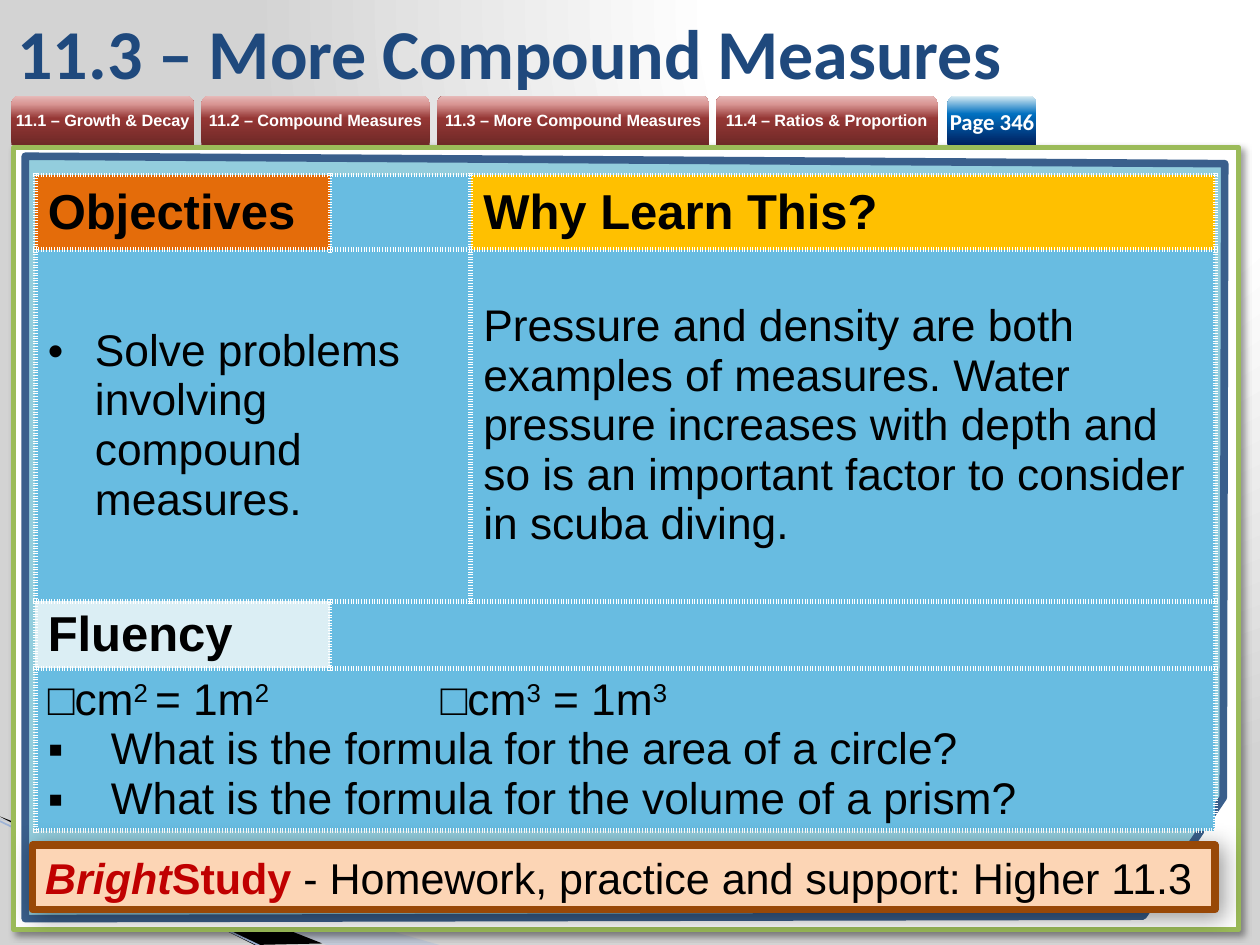
"""Build the lesson 11.3 opening slide on more compound measures."""
from lxml import etree
from pptx import Presentation
from pptx import util as u
from pptx.dml.color import RGBColor
from pptx.enum import dml, shapes, text
from pptx.oxml import ns

Cm, Pt = u.Cm, u.Pt
COLORS = {
    "white": "FFFFFF", "black": "000000", "grey": "D3D3D3", "navy": "1F497D",
    "swoosh": "A7B9DB", "stripe": "9EB3D6", "green": "9BBB59", "aqua": "93CDDD",
    "frame": "3A5F8C", "sky": "68BCE1", "orange": "E46C0A", "gold": "FFC000",
    "ice": "DBEEF4", "peach": "FCD5B5", "brown": "984807", "red": "C00000",
    "red1": "6F2927", "red2": "953735", "red3": "D99694", "red4": "E6B9B8",
    "blue1": "002060", "blue2": "0070C0",
}
RGB = {name: RGBColor.from_string(value) for name, value in COLORS.items()}


def add_xml(parent, tag, index=None, **attrs):
    """Add a DrawingML child element and return it."""
    el = etree.Element(ns.qn("a:" + tag), {k: str(v) for k, v in attrs.items()})
    parent.insert(len(parent) if index is None else index, el)
    return el


def add_gradient(root, stops):
    """Replace the first gradient's contents under root with the given stops."""
    grad = next(root.iter(ns.qn("a:gradFill")))
    for child in list(grad):
        grad.remove(child)
    gs_list = add_xml(grad, "gsLst")
    for pos, color in stops:
        gs = add_xml(gs_list, "gs", pos=pos * 1000)
        add_xml(gs, "srgbClr", val=COLORS[color])
    return grad


prs = Presentation()
prs.slide_width, prs.slide_height = Cm(25.4), Cm(19.05)
s = prs.slides.add_slide(prs.slide_layouts[5])

s.background.fill.gradient()
grad = add_gradient(s._element, [(0, "white"), (40, "white"), (100, "grey")])
add_xml(add_xml(grad, "path", path="circle"), "fillToRect", l=65000, b=98000)

outlines = [
    ("swoosh", None, [(-0.03, 16.51), (8.86, 19.05), (6.58, 19.05), (-0.03, 16.48)]),
    ("black", None, [(0, 16.46), (6.5, 19.02), (5.13, 19.05), (0.03, 16.48)]),
    ("aqua", "frame", [(0.51, 3.15), (24.69, 3.3), (24.66, 16.08), (23.04, 18.47), (0.51, 18.52)]),
]
for fill, line, points in outlines:
    if line:
        c = s.shapes.add_connector(shapes.MSO_CONNECTOR.STRAIGHT, Cm(-0.03), Cm(16.54), Cm(5.31), Cm(19.1))
        c.line.color.rgb, c.line.width = RGB["stripe"], Pt(0.95)
        add_xml(c._element.spPr, "effectLst")
        panel = s.shapes.add_shape(shapes.MSO_SHAPE.RECTANGLE, Cm(0.28), Cm(2.97), Cm(24.69), Cm(15.77))
    start, *rest = [(Cm(x), Cm(y)) for x, y in points]
    fb = s.shapes.build_freeform(*start)
    fb.add_line_segments(rest)
    sp = fb.convert_to_shape()
    sp.shadow.inherit = False
    sp.fill.solid()
    sp.fill.fore_color.rgb = RGB[fill]
    if line:
        sp.line.color.rgb, sp.line.width = RGB[line], Pt(4.33)
    else:
        sp.line.fill.background()
    if fill == "swoosh":
        add_xml(next(sp._element.spPr.iter(ns.qn("a:srgbClr"))), "alpha", val=40000)

reds = [(0, "red1"), (54, "red2"), (83, "red3"), (100, "red4")]
blues = [(0, "blue1"), (63, "blue2"), (100, "ice")]
tabs = [
    ("11.1 – Growth & Decay", 0.23, 3.68, reds, "Arial", 9.3),
    ("11.2 – Compound Measures", 4.06, 4.6, reds, "Arial", 9.3),
    ("11.3 – More Compound Measures", 8.81, 5.49, reds, "Arial", 9.3),
    ("11.4 – Ratios & Proportion", 14.43, 4.47, reds, "Arial", 9.3),
    ("Page 346", 19.1, 1.8, blues, "Calibri", 13),
]
for label, left, width, stops, font, size in tabs:
    sp = s.shapes.add_shape(shapes.MSO_SHAPE.ROUND_2_SAME_RECTANGLE, Cm(left), Cm(1.93), Cm(width), Cm(0.99))
    sp.shadow.inherit = False
    sp.line.fill.background()
    sp.fill.gradient()
    add_xml(add_gradient(sp._element, stops), "lin", ang=16200000, scaled=0)
    tf = sp.text_frame
    tf.margin_left = tf.margin_right = tf.margin_top = tf.margin_bottom = 0
    tf.vertical_anchor = text.MSO_ANCHOR.MIDDLE
    p = tf.paragraphs[0]
    p.text, p.alignment = label, text.PP_ALIGN.CENTER
    if stops is reds:
        p.line_spacing = Pt(10)
    p.font.name, p.font.size, p.font.bold = font, Pt(size), True
    p.font.color.rgb = RGB["white"]

title = s.shapes.title
title.left, title.top, title.width, title.height = Cm(0.1), Cm(0.13), Cm(21.01), Cm(1.8)
title.text_frame.vertical_anchor = text.MSO_ANCHOR.MIDDLE
p = title.text_frame.paragraphs[0]
p.text, p.alignment = "11.3 – More Compound Measures", text.PP_ALIGN.LEFT
p.font.name, p.font.size, p.font.bold = "Calibri", Pt(40), True
p.font.color.rgb = RGB["navy"]

cols, rows = [5.94, 2.84, 15.01], [1.5, 7.09, 1.35, 3.27]
tbl = s.shapes.add_table(4, 3, Cm(0.71), Cm(3.53), Cm(sum(cols)), Cm(sum(rows))).table
tbl.first_row = tbl.horz_banding = False
for col, width in zip(tbl.columns, cols):
    col.width = Cm(width)
for row, height in zip(tbl.rows, rows):
    row.height = Cm(height)
for row, first, last in [(1, 0, 1), (2, 1, 2), (3, 0, 2)]:
    tbl.cell(row, first).merge(tbl.cell(row, last))

headings = {(0, 0): "orange", (0, 2): "gold", (2, 0): "ice"}
contents = {
    (0, 0): [("Objectives", None, 0)],
    (0, 2): [("Why Learn This?", None, 0)],
    (1, 0): [("Solve problems involving compound measures.", "•", 0.95)],
    (1, 2): [("Pressure and density are both examples of measures. Water pressure increases "
              "with depth and so is an important factor to consider in scuba diving.", None, 0)],
    (2, 0): [("Fluency", None, 0)],
    (3, 0): [("□cm^2 ^= 1m^2^\t□cm^3^ = 1m^3", None, 0),
             ("What is the formula for the area of a circle?", "▪", 1.27),
             ("What is the formula for the volume of a prism?", "▪", 1.27)],
}
for row in range(4):
    for col in range(3):
        cell = tbl.cell(row, col)
        cell.vertical_anchor = text.MSO_ANCHOR.MIDDLE
        cell.fill.solid()
        cell.fill.fore_color.rgb = RGB[headings.get((row, col), "sky")]
        for i, side in enumerate(["lnL", "lnR", "lnT", "lnB"]):
            ln = add_xml(cell._tc.get_or_add_tcPr(), side, i, w=Pt(3))
            add_xml(add_xml(ln, "solidFill"), "srgbClr", val=COLORS["white"])
            add_xml(ln, "prstDash", val="sysDot")
        tf = cell.text_frame
        for i, (line, bullet, indent) in enumerate(contents.get((row, col), [])):
            p = tf.add_paragraph() if i else tf.paragraphs[0]
            pPr = p._p.get_or_add_pPr()
            if bullet:
                pPr.set("marL", str(Cm(indent)))
                pPr.set("indent", str(-Cm(indent)))
                add_xml(pPr, "buFont", typeface="Arial")
                add_xml(pPr, "buChar", char=bullet)
            if "\t" in line:
                add_xml(add_xml(pPr, "tabLst"), "tab", pos=Cm(7.92), algn="l")
            for j, part in enumerate(line.split("^")):
                r = p.add_run()
                r.text = part
                if j % 2:
                    r._r.get_or_add_rPr().set("baseline", "30000")
            heading = (row, col) in headings
            p.font.name, p.font.bold = "Arial", heading
            p.font.size = Pt(28 if heading else 25.3)
            p.font.color.rgb = RGB["black"]

banner = s.shapes.add_shape(shapes.MSO_SHAPE.RECTANGLE, Cm(0.66), Cm(17.04), Cm(23.83), Cm(1.3))
boxes = [(panel, "white", "green", 3, 4), (banner, "peach", "brown", 4.33, 13)]
for sp, fill, line, width, blur in boxes:
    sp.fill.solid()
    sp.fill.fore_color.rgb = RGB[fill]
    sp.line.color.rgb, sp.line.width = RGB[line], Pt(width)
    sp.shadow.inherit = False
    effects = sp._element.spPr.find(ns.qn("a:effectLst"))
    shadow = add_xml(effects, "outerShdw", blurRad=Pt(blur), dist=Pt(3), dir=2700000, algn="tl", rotWithShape=0)
    add_xml(add_xml(shadow, "srgbClr", val=COLORS["black"]), "alpha", val=40000)

tf = banner.text_frame
tf.word_wrap, tf.vertical_anchor = True, text.MSO_ANCHOR.MIDDLE
p = tf.paragraphs[0]
p.alignment = text.PP_ALIGN.LEFT
p.font.name, p.font.size = "Arial", Pt(24.6)
for words, color, bold, italic in [("Bright", "red", True, True), ("Study ", "red", True, False),
                                   ("- Homework, practice and support: Higher 11.3", "black", False, False)]:
    r = p.add_run()
    r.text, r.font.bold, r.font.italic = words, bold, italic
    r.font.color.rgb = RGB[color]

prs.save("out.pptx")
